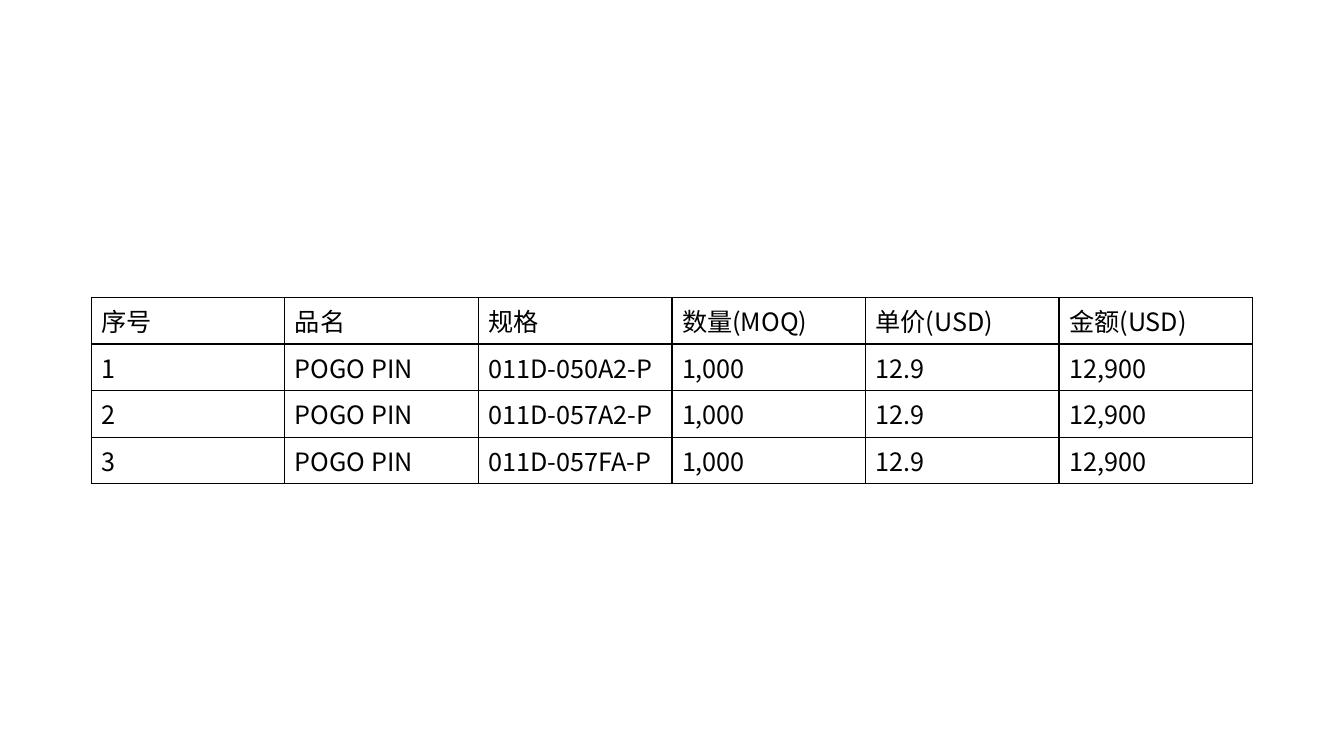
from dataclasses import dataclass

from lxml import etree
from pptx import Presentation
from pptx.dml.color import RGBColor
from pptx.enum.text import MSO_ANCHOR
from pptx.oxml.ns import qn
from pptx.util import Inches, Pt

MIDDLE = MSO_ANCHOR.MIDDLE
WIDTH, HEIGHT = 13.33, 7.5
BLANK = 6


@dataclass(frozen=True)
class Theme:
    font: str = "Noto Sans CJK KR"
    size: int = 18
    ink: str = "000000"
    rule: int = 1
    col: float = 1.92
    row: float = 0.4


HEADS = ["序号", "品名", "规格", "数量(MOQ)", "单价(USD)", "金额(USD)"]
SPECS = ["011D-050A2-P", "011D-057A2-P", "011D-057FA-P"]
COUNT, PRICE = 1000, 12.9


def put_text(frame, text, font, size, color):
    run = frame.paragraphs[0].add_run()
    run.text = text
    run.font.name = font
    run.font.size = Pt(size)
    run.font.color.rgb = RGBColor.from_string(color)
    east = etree.SubElement(run.font._element, qn("a:ea"))
    east.set("typeface", font)


def set_edges(cell, color, width):
    """Draw a solid line on all four sides of a cell."""
    props = cell._tc.get_or_add_tcPr()
    for side in "LRTB":
        line = etree.SubElement(props, qn(f"a:ln{side}"), w=str(Pt(width)))
        fill = etree.SubElement(line, qn("a:solidFill"))
        etree.SubElement(fill, qn("a:srgbClr"), val=color)


class Page:
    def __init__(self, slide, theme):
        self.slide = slide
        self.theme = theme

    def table(self, rows):
        """Centre a ruled table of equal columns and rows on the slide."""
        look = self.theme
        wide, high = len(rows[0]) * look.col, len(rows) * look.row
        left, top = (WIDTH - wide) / 2, (HEIGHT - high) / 2
        frame = self.slide.shapes.add_table(
            len(rows), len(rows[0]),
            Inches(left), Inches(top), Inches(wide), Inches(high))
        grid = frame.table
        grid.first_row = grid.horz_banding = False
        for r, row in enumerate(rows):
            for c, text in enumerate(row):
                self.cell(grid.cell(r, c), text)

    def cell(self, cell, text):
        look = self.theme
        set_edges(cell, look.ink, look.rule)
        cell.fill.background()
        cell.vertical_anchor = MIDDLE
        put_text(cell.text_frame, text, font=look.font,
                 size=look.size, color=look.ink)


def main():
    deck = Presentation()
    deck.slide_width, deck.slide_height = Inches(WIDTH), Inches(HEIGHT)
    page = Page(deck.slides.add_slide(deck.slide_layouts[BLANK]), Theme())
    items = [[str(n), "POGO PIN", spec, f"{COUNT:,}", str(PRICE),
              f"{COUNT * PRICE:,.0f}"] for n, spec in enumerate(SPECS, 1)]
    page.table([HEADS] + items)
    deck.save("out.pptx")


if __name__ == "__main__":
    main()
